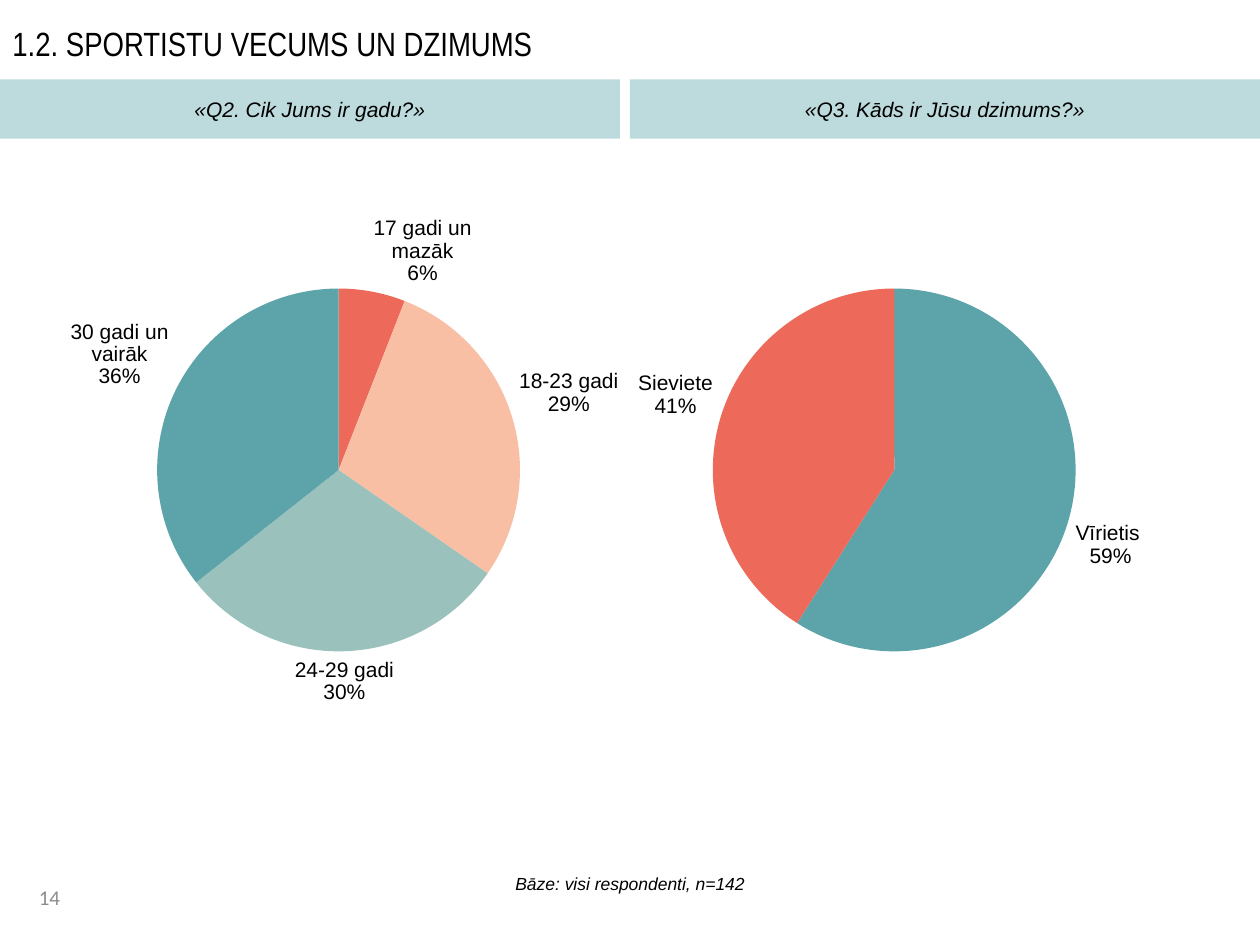
from lxml import etree
from pptx import Presentation
from pptx.chart.data import CategoryChartData
from pptx.dml.color import RGBColor
from pptx.enum.chart import XL_CHART_TYPE, XL_LABEL_POSITION
from pptx.enum.shapes import MSO_SHAPE
from pptx.enum.text import MSO_ANCHOR, PP_ALIGN
from pptx.oxml.ns import qn
from pptx.util import Inches, Pt

PIE = XL_CHART_TYPE.PIE
OUTSIDE = XL_LABEL_POSITION.OUTSIDE_END
RECTANGLE = MSO_SHAPE.RECTANGLE
MIDDLE = MSO_ANCHOR.MIDDLE
LEFT, CENTER = PP_ALIGN.LEFT, PP_ALIGN.CENTER

BLACK = RGBColor(0x00, 0x00, 0x00)
GRAY = RGBColor(0x8C, 0x8C, 0x8C)
TEAL = RGBColor(0x5C, 0xA4, 0xA9)
SAGE = RGBColor(0x9B, 0xC1, 0xBC)
PEACH = RGBColor(0xF9, 0xBF, 0xA5)
CORAL = RGBColor(0xED, 0x6A, 0x5A)

WIDTH, HEIGHT = 10, 7.5
HALF = WIDTH / 2
TITLE_HEIGHT = 0.63
BAND_HEIGHT = 0.47
CHART_TOP, CHART_WIDTH, CHART_HEIGHT = 1.66, 5.24, 4.41
PLOT_SHARES = {"x": 0.215, "y": 0.143, "w": 0.55, "h": 0.653}


def write(shape, text, size=12, font="Arial", color=BLACK, align=CENTER,
          italic=False, small_caps=False):
    frame = shape.text_frame
    frame.word_wrap = True
    frame.vertical_anchor = MIDDLE
    para = frame.paragraphs[0]
    para.alignment = align
    span = para.add_run()
    span.text = text
    span.font.size = Pt(size)
    span.font.name = font
    span.font.italic = italic
    span.font.color.rgb = color
    if small_caps:
        span._r.get_or_add_rPr().set("cap", "small")


def add_text(page, text, left, top, width, height, **style):
    box = page.shapes.add_textbox(*map(Inches, (left, top, width, height)))
    write(box, text, **style)


def add_band(page, text, left, width):
    band = page.shapes.add_shape(
        RECTANGLE, *map(Inches, (left, TITLE_HEIGHT, width, BAND_HEIGHT)))
    band.shadow.inherit = False
    band.line.fill.background()
    band.fill.solid()
    band.fill.fore_color.rgb = TEAL
    color = band._element.spPr.find(qn("a:solidFill"))[0]
    etree.SubElement(color, qn("a:alpha")).set("val", "40000")
    write(band, text, italic=True)


def place_plot(chart):
    plot_area = chart._chartSpace.chart.plotArea
    layout = plot_area.find(qn("c:layout"))
    if layout is None:
        layout = etree.Element(qn("c:layout"))
        plot_area.insert(0, layout)
    manual = etree.SubElement(layout, qn("c:manualLayout"))
    settings = {"layoutTarget": "inner", "xMode": "edge", "yMode": "edge",
                **PLOT_SHARES}
    for name, value in settings.items():
        etree.SubElement(manual, qn(f"c:{name}")).set("val", str(value))


def add_pie(page, left, slices):
    data = CategoryChartData(number_format="0")
    data.categories = [name for name, value, color in slices]
    data.add_series("Series 1", [value for name, value, color in slices])
    chart = page.shapes.add_chart(
        PIE, *map(Inches, (left, CHART_TOP, CHART_WIDTH, CHART_HEIGHT)), data).chart
    chart.has_legend = False
    chart.has_title = False
    chart.font.size = Pt(10)
    chart.font.name = "Arial"
    chart.font.color.rgb = BLACK
    place_plot(chart)

    plot = chart.plots[0]
    plot.vary_by_categories = True
    for index, (name, value, color) in enumerate(slices):
        fill = plot.series[0].points[index].format.fill
        fill.solid()
        fill.fore_color.rgb = color

    plot.has_data_labels = True
    labels = plot.data_labels
    labels.show_value = False
    labels.show_percentage = True
    labels.show_category_name = True
    labels.number_format = "0%"
    labels.number_format_is_linked = False
    labels.position = OUTSIDE
    labels.font.size = Pt(12)
    labels.font.name = "Arial"
    labels.font.color.rgb = BLACK


def main():
    deck = Presentation()
    deck.slide_width, deck.slide_height = Inches(WIDTH), Inches(HEIGHT)
    page = deck.slides.add_slide(deck.slide_layouts[6])

    add_text(page, "14", 0.21, 6.92, 1.06, 0.4,
             font="Calibri", color=GRAY, align=LEFT)
    add_text(page, "1.2. sportistu vecums un dzimums", 0, 0, WIDTH, TITLE_HEIGHT,
             size=24, font="Arial Narrow", align=LEFT, small_caps=True)
    add_text(page, "Bāze: visi respondenti, n=142", 0, 6.78, WIDTH, BAND_HEIGHT,
             size=10, italic=True)
    add_band(page, "«Q2. Cik Jums ir gadu?»", 0, HALF - 0.08)
    add_band(page, "«Q3. Kāds ir Jūsu dzimums?»", HALF, HALF)
    add_pie(page, 4.53, [("Vīrietis ", 59, TEAL), ("Sieviete", 41, CORAL)])
    add_pie(page, 0.12, [
        ("17 gadi un mazāk", 6, CORAL),
        ("18-23 gadi", 29, PEACH),
        ("24-29 gadi", 30, SAGE),
        ("30 gadi un vairāk", 36, TEAL),
    ])
    deck.save("out.pptx")


if __name__ == "__main__":
    main()
